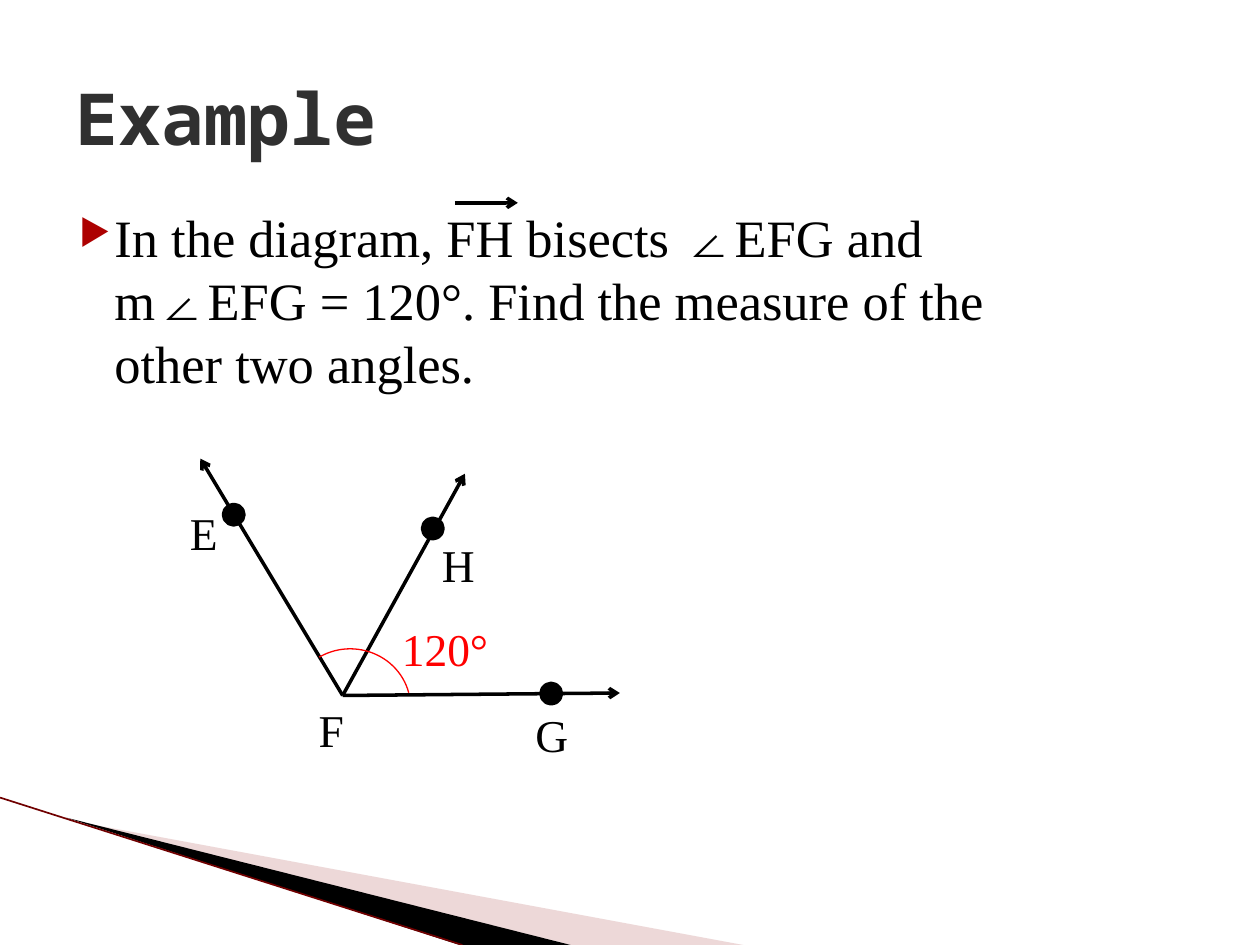
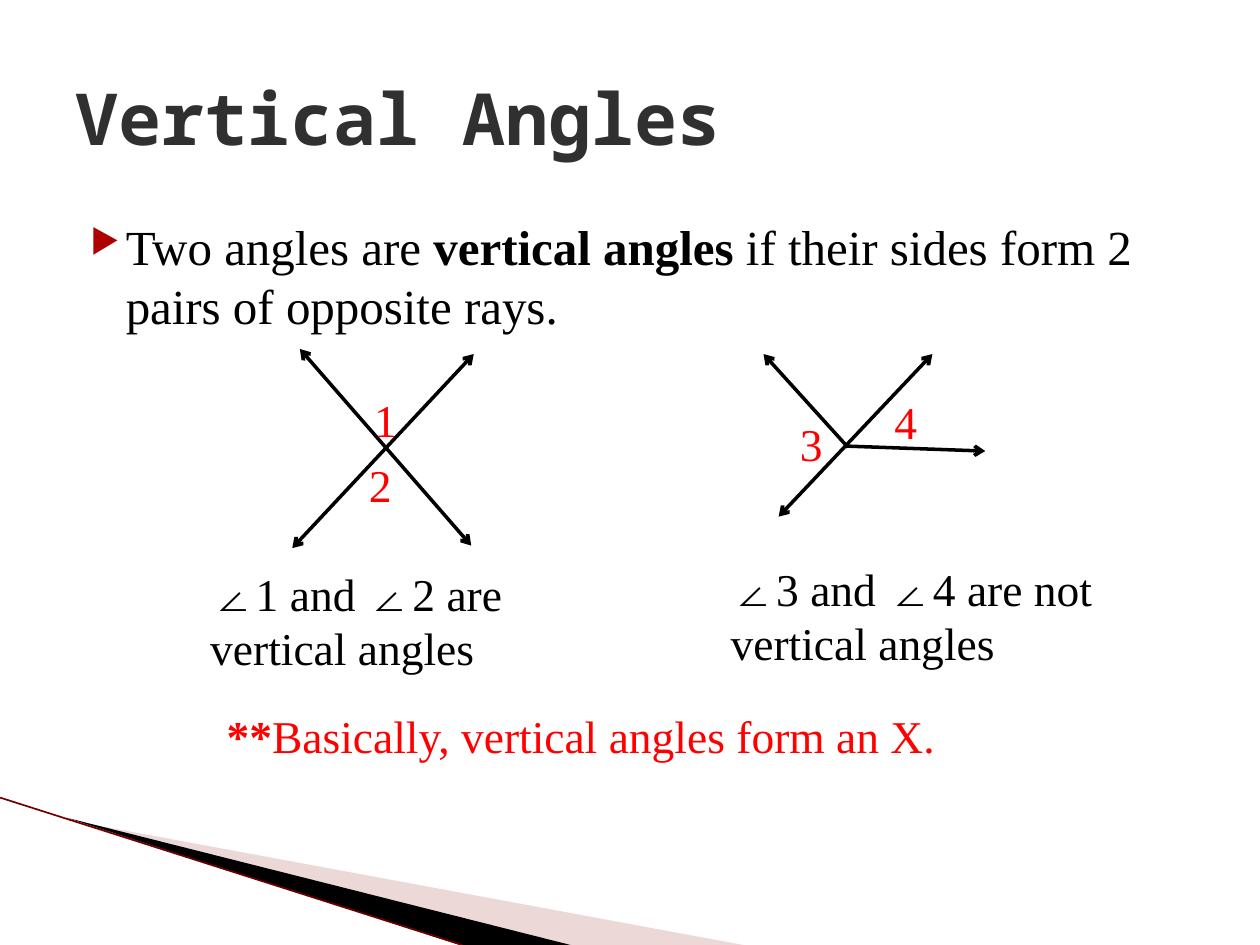
from lxml import etree
from pptx import Presentation
from pptx.dml.color import RGBColor
from pptx.enum.shapes import MSO_CONNECTOR, MSO_SHAPE
from pptx.enum.text import MSO_ANCHOR
from pptx.oxml.ns import qn
from pptx.util import Pt

STRAIGHT = MSO_CONNECTOR.STRAIGHT
ELLIPSE, ARC = MSO_SHAPE.OVAL, MSO_SHAPE.ARC
MIDDLE, TOP = MSO_ANCHOR.MIDDLE, MSO_ANCHOR.TOP

PX = 9144  # 100 px to the inch
BLACK = RGBColor(0x00, 0x00, 0x00)
RED = RGBColor(0xFF, 0x00, 0x00)
TITLE_GREY = RGBColor(0x30, 0x30, 0x30)
PINK = RGBColor(0xD2, 0x9E, 0x9E)
DARK_RED = RGBColor(0x70, 0x00, 0x00)
BULLET_RED = RGBColor(0xAD, 0x01, 0x01)
SERIF, MONO = "Times New Roman", "Noto Sans Mono"


def write(slide, box, runs, size=26, color=BLACK, font=SERIF, anchor=TOP, bullet=False):
    """Put one paragraph of (text, bold) runs in a box."""
    frame = slide.shapes.add_textbox(*[v * PX for v in box]).text_frame
    frame.word_wrap = True
    frame.vertical_anchor = anchor
    paragraph = frame.paragraphs[0]
    if bullet:
        props = paragraph._p.get_or_add_pPr()
        props.set("marL", str(40 * PX))
        props.set("indent", str(-28 * PX))
        tint = etree.SubElement(props, qn("a:buClr"))
        etree.SubElement(tint, qn("a:srgbClr"), val=str(BULLET_RED))
        etree.SubElement(props, qn("a:buSzPct"), val="68000")
        etree.SubElement(props, qn("a:buChar"), char="▶")
    for text, bold in runs:
        run = paragraph.add_run()
        run.text = text
        run.font.name, run.font.size, run.font.bold = font, Pt(size), bold
        run.font.color.rgb = color


def draw_line(slide, ends, color=BLACK, width=2, arrows=("tailEnd",)):
    """Draw a line; headEnd is the arrow at its start, tailEnd at its end."""
    line = slide.shapes.add_connector(STRAIGHT, *[v * PX for v in ends])
    line.line.color.rgb = color
    line.line.width = Pt(width)
    for end in arrows:
        etree.SubElement(line.line._get_or_add_ln(), qn(f"a:{end}"), type="arrow")
    etree.SubElement(line._element.spPr, qn("a:effectLst"))


prs = Presentation()
prs.slide_width, prs.slide_height = 1000 * PX, 750 * PX

# Shared corner wedges and title
WEDGES = [
    (PINK, [(55, 651), (590, 750), (453, 750)]),
    (BLACK, [(53, 649), (453, 750), (365, 750)]),
]
slides = []
for title in ["Example", "Vertical Angles"]:
    slide = prs.slides.add_slide(prs.slide_layouts[6])
    for color, corners in WEDGES:
        builder = slide.shapes.build_freeform(*corners[0], scale=PX)
        builder.add_line_segments(corners[1:], close=True)
        wedge = builder.convert_to_shape()
        wedge.shadow.inherit = False
        wedge.fill.solid()
        wedge.fill.fore_color.rgb = color
        wedge.line.fill.background()
        if color == PINK:
            tint = wedge._element.spPr.find(".//" + qn("a:srgbClr"))
            etree.SubElement(tint, qn("a:alpha"), val="40000")
    draw_line(slide, (0, 633, 367, 750), DARK_RED, 0.95, arrows=())
    write(slide, (50, 30, 900, 125), [(title, True)], 41, TITLE_GREY, MONO, MIDDLE)
    slides.append(slide)
example, vertical = slides

# Example: the bisected angle
write(example, (41, 158, 826, 162),
      [("In the diagram, FH bisects ∠EFG and m∠EFG = 120°. "
        "Find the measure of the other two angles.", False)], 30, bullet=True)
VERTEX_F = (272, 552)
for tip in [(159, 364), (492, 550), (369, 376)]:
    draw_line(example, VERTEX_F + tip)
draw_line(example, (361, 161, 411, 161))  # ray mark above FH

DOT = 13
for left, top in [(179, 402), (337, 413), (431, 544)]:
    dot = example.shapes.add_shape(ELLIPSE, left * PX, top * PX, DOT * PX, DOT * PX)
    dot.shadow.inherit = False
    dot.fill.solid()
    dot.fill.fore_color.rgb = BLACK
    dot.line.color.rgb = BLACK
    dot.line.width = Pt(4.33)

angle_arc = example.shapes.add_shape(ARC, 230 * PX, 515 * PX, 96 * PX, 93 * PX)
angle_arc.shadow.inherit = False
angle_arc.adjustments[0] = 143.04
angle_arc.adjustments[1] = 207.54
angle_arc.fill.background()
angle_arc.line.color.rgb = RED
angle_arc.line.width = Pt(0.75)

for point, left, top in [("E", 141, 396), ("F", 243, 552), ("G", 415, 556), ("H", 341, 421)]:
    write(example, (left, top, 43, 54), [(point, False)])
write(example, (309, 488, 99, 54), [("120°", False)], color=RED)

# Vertical angles: definition
write(vertical, (50, 167, 900, 107),
      [("Two angles are ", False), ("vertical angles ", True),
       ("if their sides form 2 pairs of opposite rays.", False)], 28, bullet=True)

# Crossing lines, and rays that do not make an X
for ends in [(238, 277, 374, 433), (376, 281, 232, 435), (740, 281, 618, 410)]:
    draw_line(vertical, ends, arrows=("headEnd", "tailEnd"))
for ends in [(673, 355, 606, 281), (670, 354, 782, 358)]:
    draw_line(vertical, ends)
for number, left, top in [("1", 287, 306), ("2", 283, 358), ("3", 625, 325), ("4", 700, 308)]:
    write(vertical, (left, top, 42, 54), [(number, False)], color=RED)

# Captions and summary
write(vertical, (157, 444, 300, 98), [("∠1 and ∠2 are vertical angles", False)])
write(vertical, (570, 440, 349, 98), [("∠3 and ∠4 are not vertical angles", False)])
write(vertical, (170, 557, 686, 54),
      [("**", True), ("Basically, vertical angles form an X.", False)], color=RED)

prs.save("out.pptx")
